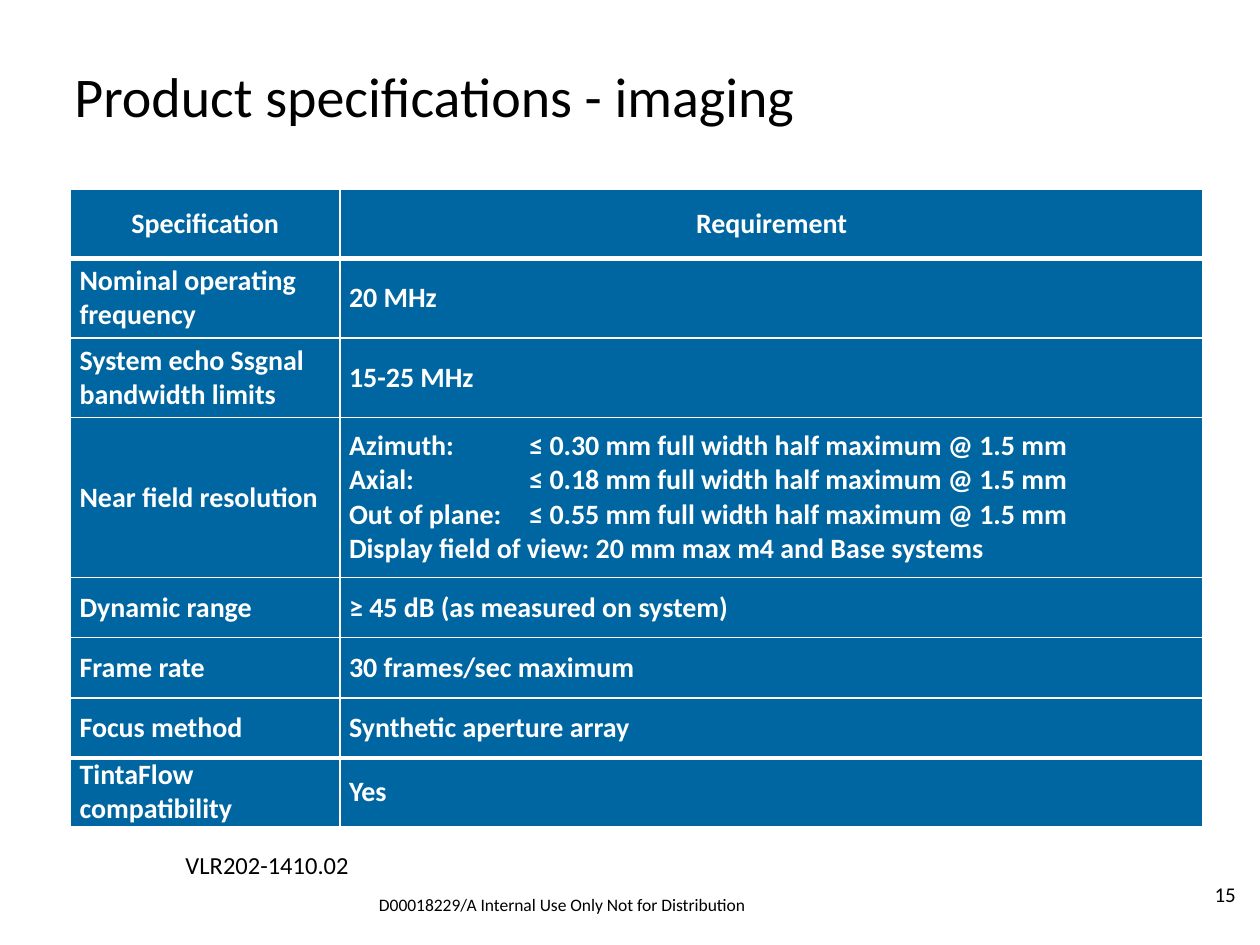
from lxml import etree
from pptx import Presentation, util as u
from pptx.dml.color import RGBColor
from pptx.enum import text as t
from pptx.oxml import ns

# Content
TITLE = "Product specifications - imaging"
HEADER = ("Specification", "Requirement")
SPECIFICATIONS = [
    ("Nominal operating frequency", ["20 MHz"]),
    ("System echo Ssgnal bandwidth limits", ["15-25 MHz"]),
    ("Near field resolution", [
        "Azimuth:\t≤ 0.30 mm full width half maximum @ 1.5 mm",
        "Axial:\t≤ 0.18 mm full width half maximum @ 1.5 mm",
        "Out of plane:\t≤ 0.55 mm full width half maximum @ 1.5 mm",
        "Display field of view: 20 mm max m4 and Base systems",
    ]),
    ("Dynamic range", ["≥ 45 dB (as measured on system)"]),
    ("Frame rate", ["30 frames/sec maximum"]),
    ("Focus method", ["Synthetic aperture array"]),
    ("TintaFlow compatibility", ["Yes"]),
]
# Text, box (left, top, width, height), size, alignment
NOTES = [
    ("15", (694, 504, 21, 16), 12, t.PP_ALIGN.LEFT),
    ("VLR202-1410.02", (106, 486, 423, 25), 14, t.PP_ALIGN.LEFT),
    ("D00018229/A Internal Use Only Not for Distribution",
     (194.4, 511, 253.4, 12), 10, t.PP_ALIGN.CENTER),
]

# Layout and look
COLOURS = {"text": "000000", "cell": "0066A1", "light": "FFFFFF"}
FONT = "Calibri"
TITLE_BOX = (42.5, 35.3, 635, 79.2)
TABLE_LEFT, TABLE_TOP = 40.3, 108
COLUMN_WIDTHS = (154, 493.2)
ROW_HEIGHTS = (39.6, 45.5, 45.5, 91.4, 34.4, 34.4, 34.4, 38.4)
TAB_STOPS = (14.4, 103)
THIN, THICK = 1, 3
FRAME = {"margin_left": 0, "margin_top": 0, "margin_right": 0, "margin_bottom": 0,
         "word_wrap": True, "auto_size": t.MSO_AUTO_SIZE.NONE,
         "vertical_anchor": t.MSO_ANCHOR.TOP}
CELL = {"margin_left": u.Pt(5.2), "margin_top": 0, "margin_right": u.Pt(5.2),
        "margin_bottom": 0, "vertical_anchor": t.MSO_ANCHOR.MIDDLE}


def apply(target, values):
    for name, value in values.items():
        setattr(target, name, value)


def write(para, words, size, colour, align=t.PP_ALIGN.LEFT, bold=False):
    para.alignment = align
    span = para.add_run()
    span.text = words
    apply(span.font, {"name": FONT, "size": u.Pt(size), "bold": bold})
    span.font.color.rgb = RGBColor.from_string(COLOURS[colour])


def add_tabs(para):
    tabs = etree.SubElement(para._p.get_or_add_pPr(), ns.qn("a:tabLst"))
    for stop in TAB_STOPS:
        etree.SubElement(tabs, ns.qn("a:tab"), pos=str(u.Pt(stop)), algn="l")


def add_borders(cell, top, bottom):
    widths = {"L": THIN, "R": THIN, "T": top, "B": bottom}
    for place, (side, width) in enumerate(widths.items()):
        line = etree.Element(ns.qn(f"a:ln{side}"), w=str(u.Pt(width)))
        fill = etree.SubElement(line, ns.qn("a:solidFill"))
        etree.SubElement(fill, ns.qn("a:srgbClr"), val=COLOURS["light"])
        cell._tc.get_or_add_tcPr().insert(place, line)


def fill_cell(cell, lines, align, top, bottom):
    apply(cell, CELL)
    cell.fill.solid()
    cell.fill.fore_color.rgb = RGBColor.from_string(COLOURS["cell"])
    add_borders(cell, top, bottom)
    frame = cell.text_frame
    for index, words in enumerate(lines):
        para = frame.add_paragraph() if index else frame.paragraphs[0]
        if "\t" in words:
            add_tabs(para)
        write(para, words, 16, "light", align, bold=True)


def add_specification_table(page):
    rows = [[[words] for words in HEADER]]
    rows += [[[name], lines] for name, lines in SPECIFICATIONS]
    box = (TABLE_LEFT, TABLE_TOP, sum(COLUMN_WIDTHS), sum(ROW_HEIGHTS))
    table = page.shapes.add_table(len(rows), len(HEADER), *map(u.Pt, box)).table
    for column, width in zip(table.columns, COLUMN_WIDTHS):
        column.width = u.Pt(width)
    for row, height in zip(table.rows, ROW_HEIGHTS):
        row.height = u.Pt(height)

    # Thick rules below the header and above the last row
    thick_rules = (1, len(rows) - 1)
    for r, row in enumerate(rows):
        top, bottom = (THICK if edge in thick_rules else THIN for edge in (r, r + 1))
        for c, lines in enumerate(row):
            align = t.PP_ALIGN.LEFT if r else t.PP_ALIGN.CENTER
            fill_cell(table.cell(r, c), lines, align, top, bottom)


def main():
    deck = Presentation()
    deck.slide_width, deck.slide_height = u.Pt(720), u.Pt(540)
    page = deck.slides.add_slide(deck.slide_layouts[5])

    # Title
    title = page.shapes.title
    apply(title, dict(zip(("left", "top", "width", "height"), map(u.Pt, TITLE_BOX))))
    apply(title.text_frame, FRAME)
    write(title.text_frame.paragraphs[0], TITLE, 32, "text")

    add_specification_table(page)

    # Page number, document number and footer
    for words, place, size, align in NOTES:
        box = page.shapes.add_textbox(*map(u.Pt, place))
        apply(box.text_frame, FRAME)
        write(box.text_frame.paragraphs[0], words, size, "text", align)

    deck.save("out.pptx")


if __name__ == "__main__":
    main()
